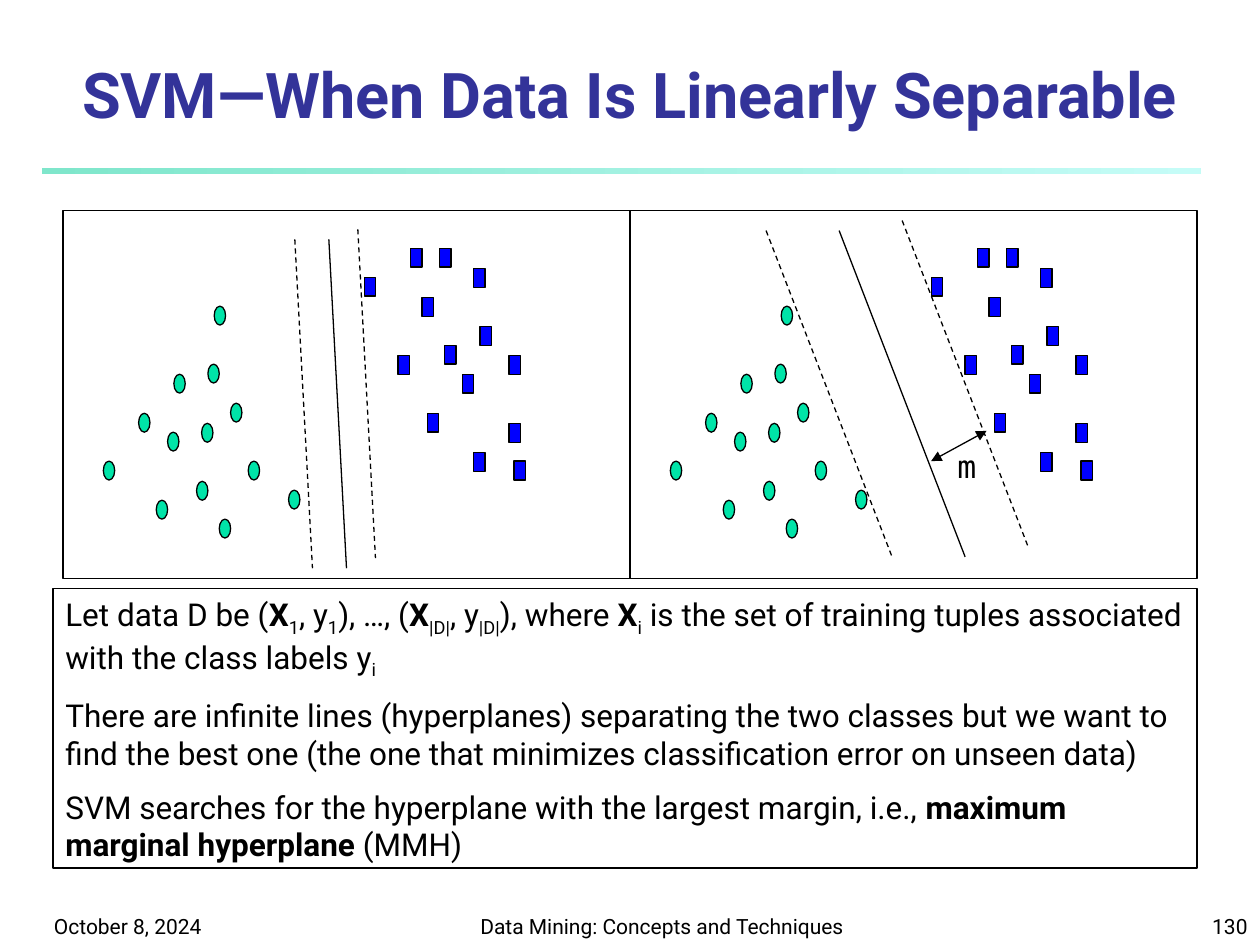
"""Build the slide on support vector machines with linearly separable data."""
import pptx
import pptx.chart.data
import pptx.dml.color
import pptx.enum.dml
import pptx.enum.shapes
import pptx.enum.text
import pptx.oxml.ns
import pptx.util
from lxml import etree

Inches = pptx.util.Inches
Pt = pptx.util.Pt
Shape = pptx.enum.shapes.MSO_SHAPE
Align = pptx.enum.text.PP_ALIGN
Anchor = pptx.enum.text.MSO_ANCHOR

THEME = {
    "font": "Roboto", "mono": "DejaVu Sans Mono",
    "ink": "000000", "title": "333399", "circle": "00E4A8", "square": "0000FF",
    "rule": ("7FE6CB", "C5FCF7"),
    "title_size": 36, "body_size": 18, "footer_size": 12, "line": 0.75, "gap": 9,
}

TITLE = "SVM—When Data Is Linearly Separable"
FOOTERS = [
    ("October 8, 2024", (0.33, 7.08, 2.08, 0.42), Align.LEFT),
    ("Data Mining: Concepts and Techniques", (3.67, 7.08, 3.17, 0.42), Align.CENTER),
    ("130", (7.92, 7.08, 2.08, 0.42), Align.RIGHT),
]
EXPLANATION = [
    [("Let data D be (", ""), ("X", "bold"), ("1", "sub"), (", y", ""), ("1", "sub"),
     ("), …, (", ""), ("X", "bold"), ("|D|", "sub"), (", y", ""), ("|D|", "sub"),
     ("), where ", ""), ("X", "bold"), ("i", "sub"),
     (" is the set of training tuples associated with the class labels y", ""), ("i", "sub")],
    [("There are infinite lines (hyperplanes) separating the two classes but we want to "
      "find the best one (the one that minimizes classification error on unseen data)", "")],
    [("SVM searches for the hyperplane with the largest margin, i.e., ", ""),
     ("maximum marginal hyperplane", "bold"), (" (MMH)", "")],
]

PANEL = (0.5, 1.67, 4.5, 2.92)
MARK = (0.09, 0.15)
CIRCLES = [(1.24, 3.97), (1.33, 3.43), (0.82, 3.66), (1.1, 3.28), (1.56, 3.82),
           (1.38, 2.97), (1.6, 3.36), (1.65, 2.89), (1.83, 3.2), (1.97, 3.66),
           (1.74, 4.12), (2.29, 3.89), (1.7, 2.43)]
SQUARES = [(3.16, 2.82), (2.89, 2.2), (3.26, 1.97), (3.39, 3.28), (3.35, 2.36),
           (3.53, 2.74), (3.49, 1.97), (3.76, 2.13), (3.67, 2.97), (3.81, 2.59),
           (3.76, 3.59), (4.04, 2.82), (4.04, 3.36), (4.08, 3.66)]
CLASSES = [(Shape.OVAL, THEME["circle"], CIRCLES), (Shape.RECTANGLE, THEME["square"], SQUARES)]
HYPERPLANES = [
    {"run": (0.14, 2.61), "margins": [(2.84, 1.82), (2.34, 1.9)], "centre": (2.61, 1.9)},
    {"run": (1.0, 2.59), "margins": [(6.08, 1.83), (7.16, 1.75)], "centre": (6.66, 1.83)},
]
MARGIN_ARROW = ((7.39, 3.66), (7.83, 3.42))


def rgb(value):
    return pptx.dml.color.RGBColor.from_string(value)


def add_box(shapes, kind, place, fill=None):
    box = shapes.add_shape(kind, *map(Inches, place))
    box.shadow.inherit = False
    box.line.color.rgb = rgb(THEME["ink"])
    box.line.width = Pt(THEME["line"])
    if fill:
        box.fill.solid()
        box.fill.fore_color.rgb = rgb(fill)
    else:
        box.fill.background()
    return box


def add_line(shapes, start, end, dashed=False, arrows=False):
    line = shapes.add_connector(pptx.enum.shapes.MSO_CONNECTOR.STRAIGHT,
                                *map(Inches, (*start, *end)))
    line.line.color.rgb = rgb(THEME["ink"])
    line.line.width = Pt(THEME["line"])
    if dashed:
        line.line.dash_style = pptx.enum.dml.MSO_LINE.DASH
    if arrows:
        for end_name in ("a:headEnd", "a:tailEnd"):
            etree.SubElement(line.line._get_or_add_ln(), pptx.oxml.ns.qn(end_name), type="triangle")
    etree.SubElement(line._element.spPr, pptx.oxml.ns.qn("a:effectLst"))


def style_run(run, size, color=THEME["ink"], font=THEME["font"], bold=False):
    run.font.size = Pt(size)
    run.font.name = font
    run.font.bold = bold
    run.font.color.rgb = rgb(color)


def add_label(shapes, text, place, align, size, anchor=Anchor.BOTTOM, **style):
    frame = shapes.add_textbox(*map(Inches, place)).text_frame
    frame.word_wrap = True
    frame.vertical_anchor = anchor
    frame.text = text
    frame.paragraphs[0].alignment = align
    style_run(frame.paragraphs[0].runs[0], size, **style)


def add_panel(shapes, shift, hyperplane):
    panel = shapes.add_group_shape().shapes
    for kind, fill, points in CLASSES:
        for x, y in points:
            add_box(panel, kind, (x + shift, y, *MARK), fill)
    left, top, width, height = PANEL
    add_box(panel, Shape.RECTANGLE, (left + shift, top, width, height))
    run_x, run_y = hyperplane["run"]
    for x, y in [*hyperplane["margins"], hyperplane["centre"]]:
        add_line(panel, (x, y), (x + run_x, y + run_y), dashed=(x, y) != hyperplane["centre"])


def add_explanation(shapes):
    frame = add_box(shapes, Shape.RECTANGLE, (0.42, 4.67, 9.08, 2.22)).text_frame
    frame.word_wrap = True
    frame.vertical_anchor = Anchor.TOP
    for index, pieces in enumerate(EXPLANATION):
        paragraph = frame.add_paragraph() if index else frame.paragraphs[0]
        paragraph.alignment = Align.LEFT
        paragraph.space_before = Pt(THEME["gap"] if index else 0)
        for text, look in pieces:
            run = paragraph.add_run()
            run.text = text
            style_run(run, THEME["body_size"], bold=look == "bold")
            if look == "sub":
                run.font._element.set("baseline", "-25000")


def main():
    deck = pptx.Presentation()
    deck.slide_width, deck.slide_height = Inches(10), Inches(7.5)
    shapes = deck.slides.add_slide(deck.slide_layouts[6]).shapes

    rule = add_box(shapes, Shape.RECTANGLE, (0.33, 1.33, 9.2, 0.05))
    rule.line.fill.background()
    rule.fill.gradient()
    rule.fill.gradient_angle = 0
    for stop, color in zip(rule.fill.gradient_stops, THEME["rule"]):
        stop.color.rgb = rgb(color)

    for text, place, align in FOOTERS:
        add_label(shapes, text, place, align, THEME["footer_size"])
    add_label(shapes, TITLE, (0, 0.42, 10, 0.67), Align.CENTER, THEME["title_size"],
              color=THEME["title"], bold=True)

    for index, hyperplane in enumerate(HYPERPLANES):
        add_panel(shapes, index * PANEL[2], hyperplane)
    add_line(shapes, *MARGIN_ARROW, arrows=True)
    add_label(shapes, "m", (7.5, 3.5, 0.58, 0.4), Align.LEFT, THEME["body_size"],
              anchor=Anchor.TOP, font=THEME["mono"])
    add_explanation(shapes)
    deck.save("out.pptx")


if __name__ == "__main__":
    main()
